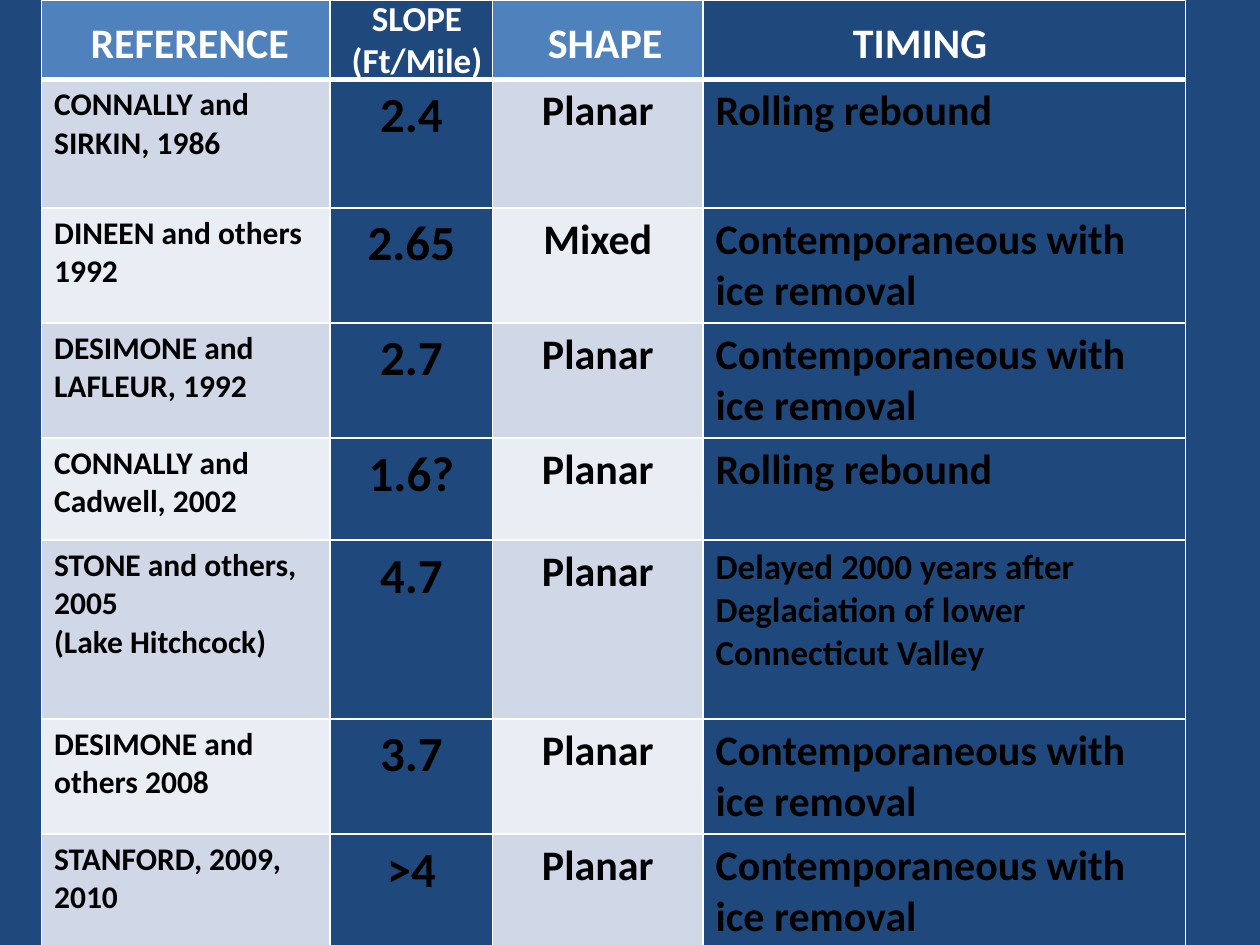
from dataclasses import dataclass
from typing import NamedTuple

from lxml.etree import SubElement
from pptx import Presentation
from pptx.dml.color import RGBColor
from pptx.enum.text import MSO_AUTO_SIZE, PP_ALIGN
from pptx.oxml.ns import qn
from pptx.util import Inches, Pt


@dataclass(frozen=True)
class Theme:
    font: str = "Calibri"
    navy: str = "1F497D"
    blue: str = "4F81BD"
    bands: tuple[str, str] = ("D0D8E8", "E9EDF4")
    white: str = "FFFFFF"
    black: str = "000000"
    reference_size: int = 18
    note_size: int = 20
    body_size: int = 24
    slope_size: int = 28
    thin_line: int = 1
    header_line: int = 3


THEME = Theme()


class Study(NamedTuple):
    reference: str
    slope: str
    shape: str
    timing: str
    height: float
    timing_size: int = THEME.body_size


class Heading(NamedTuple):
    text: str
    left: float
    top: float
    width: float
    height: float
    size: int = THEME.body_size
    wrap: bool = False


CONTEMPORANEOUS = "Contemporaneous with ice removal"
REBOUND = "Rolling rebound"
DELAYED = "Delayed 2000 years after Deglaciation of lower Connecticut Valley"

STUDIES = [
    Study("CONNALLY and SIRKIN, 1986", "2.4", "Planar", REBOUND, 1.02),
    Study("DINEEN and others 1992", "2.65", "Mixed", CONTEMPORANEOUS, 0.91),
    Study("DESIMONE and LAFLEUR, 1992", "2.7", "Planar", CONTEMPORANEOUS, 0.91),
    Study("CONNALLY and Cadwell, 2002", "1.6?", "Planar", REBOUND, 0.81),
    Study("STONE and others, 2005\n(Lake Hitchcock)", "4.7", "Planar", DELAYED, 1.42,
          THEME.note_size),
    Study("DESIMONE and others 2008", "3.7", "Planar", CONTEMPORANEOUS, 0.91),
    Study("STANFORD, 2009, 2010", ">4", "Planar", CONTEMPORANEOUS, 0.91),
]
HEADINGS = [
    Heading("REFERENCE", 0.62, 0.08, 1.79, 0.5),
    Heading("SLOPE (Ft/Mile)", 2.33, -0.08, 1.96, 0.77, THEME.note_size, True),
    Heading("SHAPE", 4.25, 0.08, 1.12, 0.5),
    Heading("TIMING", 6.67, 0.08, 1.28, 0.5),
]
COLUMN_WIDTHS = [2.29, 1.29, 1.67, 3.83]
HEADER_HEIGHT = 0.63


def write_text(text_frame, text: str, size: int, color: str, centered: bool) -> None:
    text_frame.text = text
    for paragraph in text_frame.paragraphs:
        paragraph.alignment = PP_ALIGN.CENTER if centered else PP_ALIGN.LEFT
        paragraph.font.name = THEME.font
        paragraph.font.size = Pt(size)
        paragraph.font.bold = True
        paragraph.font.color.rgb = RGBColor.from_string(color)


def format_cell(cell, fill: str, top: int, bottom: int) -> None:
    """Draw white borders, then the fill, in the order the schema requires."""
    properties = cell._tc.get_or_add_tcPr()
    widths = {"L": THEME.thin_line, "R": THEME.thin_line, "T": top, "B": bottom}
    for side, width in widths.items():
        line = SubElement(properties, qn(f"a:ln{side}"), w=str(Pt(width)))
        solid = SubElement(line, qn("a:solidFill"))
        SubElement(solid, qn("a:srgbClr"), val=THEME.white)
    cell.fill.solid()
    cell.fill.fore_color.rgb = RGBColor.from_string(fill)


def add_study_table(slide) -> None:
    heights = [HEADER_HEIGHT] + [study.height for study in STUDIES]
    table = slide.shapes.add_table(
        len(heights), len(COLUMN_WIDTHS), Inches(0.33), Inches(0),
        Inches(sum(COLUMN_WIDTHS)), Inches(sum(heights))).table
    table.first_row = table.horz_banding = False
    for column, width in zip(table.columns, COLUMN_WIDTHS):
        column.width = Inches(width)

    for row_index, height in enumerate(heights):
        table.rows[row_index].height = Inches(height)
        light = THEME.bands[(row_index - 1) % 2] if row_index else THEME.blue
        top = THEME.header_line if row_index == 1 else THEME.thin_line
        bottom = THEME.header_line if row_index == 0 else THEME.thin_line
        for column_index in range(len(COLUMN_WIDTHS)):
            fill = THEME.navy if column_index % 2 else light
            format_cell(table.cell(row_index, column_index), fill, top, bottom)

    for row_index, study in enumerate(STUDIES, start=1):
        entries = [
            (study.reference, THEME.reference_size, False),
            (study.slope, THEME.slope_size, True),
            (study.shape, THEME.body_size, True),
            (study.timing, study.timing_size, False),
        ]
        for column_index, (text, size, centered) in enumerate(entries):
            cell = table.cell(row_index, column_index)
            write_text(cell.text_frame, text, size, THEME.black, centered)


def add_heading(slide, heading: Heading) -> None:
    box = slide.shapes.add_textbox(
        Inches(heading.left), Inches(heading.top),
        Inches(heading.width), Inches(heading.height))
    text_frame = box.text_frame
    text_frame.word_wrap = heading.wrap
    text_frame.auto_size = MSO_AUTO_SIZE.SHAPE_TO_FIT_TEXT
    write_text(text_frame, heading.text, heading.size, THEME.white, heading.wrap)


def main() -> None:
    presentation = Presentation()
    presentation.slide_width = Inches(10)
    presentation.slide_height = Inches(7.5)
    slide = presentation.slides.add_slide(presentation.slide_layouts[6])
    slide.background.fill.solid()
    slide.background.fill.fore_color.rgb = RGBColor.from_string(THEME.navy)
    add_study_table(slide)
    for heading in HEADINGS:
        add_heading(slide, heading)
    presentation.save("out.pptx")


if __name__ == "__main__":
    main()
